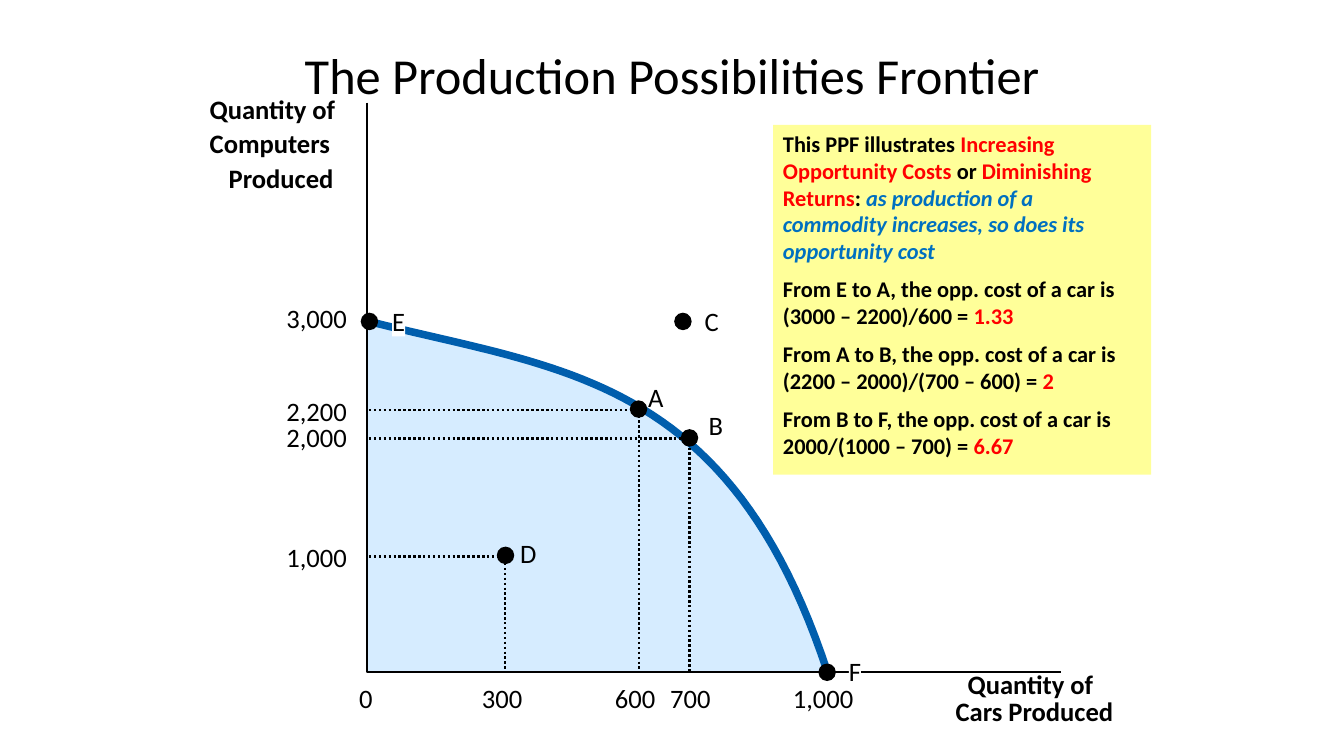
from dataclasses import dataclass

from pptx import Presentation
from pptx import util as u
from pptx.dml import color
from pptx.enum import dml, shapes, text

Pt = u.Pt


@dataclass(frozen=True)
class Theme:
    font: str = "Calibri"
    black: str = "000000"
    white: str = "FFFFFF"
    red: str = "FF0000"
    blue: str = "0070C0"
    frontier: str = "005EAD"
    attainable: str = "D6ECFF"
    note: str = "FFFF99"
    title_size: float = 36
    label_size: float = 19
    note_size: float = 16
    axis_width: float = 1.75
    frontier_width: float = 5.38


@dataclass(frozen=True)
class Box:
    left: float
    top: float
    width: float
    height: float

    @property
    def bottom(self):
        return self.top + self.height

    def lengths(self):
        return [Pt(side) for side in (self.left, self.top, self.width, self.height)]


THEME = Theme()
ALIGN = text.PP_ALIGN
LABEL_HEIGHT = 23
DOT = 12.5


def apply(target, formats):
    for name, value in formats.items():
        setattr(target, name, value)


def paint(shape, fill=None, line=None, width=THEME.axis_width, dash=None):
    shape.shadow.inherit = False
    for part, tone in ((shape.fill, fill), (shape.line.fill, line)):
        if tone:
            part.solid()
            part.fore_color.rgb = color.RGBColor.from_string(tone)
        else:
            part.background()
    if line:
        apply(shape.line, {"width": Pt(width), "dash_style": dash})


def add_span(para, words, size, tone=THEME.black, bold=False, italic=False):
    span = para.add_run()
    span.text = words
    apply(span.font, {"name": THEME.font, "size": Pt(size), "bold": bold, "italic": italic})
    span.font.color.rgb = color.RGBColor.from_string(tone)


def add_label(page, box, words, align=ALIGN.LEFT, bold=False, fill=None, size=THEME.label_size):
    label = page.shapes.add_textbox(*box.lengths())
    if fill:
        paint(label, fill)
    apply(label.text_frame, {
        "margin_left": 0, "margin_right": 0, "margin_top": 0, "margin_bottom": 0,
        "word_wrap": False, "vertical_anchor": text.MSO_ANCHOR.MIDDLE,
    })
    para = label.text_frame.paragraphs[0]
    para.alignment = align
    add_span(para, words, size, bold=bold)


def bezier(start, first, second, end, steps=48):
    points = []
    for step in range(steps + 1):
        t = step / steps
        weights = ((1 - t) ** 3, 3 * t * (1 - t) ** 2, 3 * t * t * (1 - t), t ** 3)
        points.append(tuple(
            sum(weight * value for weight, value in zip(weights, axis))
            for axis in zip(start, first, second, end)
        ))
    return points


def add_outline(page, box, points, close=False, **style):
    places = [(Pt(box.left + x), Pt(box.bottom - y)) for x, y in points]
    builder = page.shapes.build_freeform(*places[0], scale=1.0)
    builder.add_line_segments(places[1:], close=close)
    paint(builder.convert_to_shape(), **style)


def add_curves(page, box):
    edge = bezier((329, 0), (267.8, 180), (177.8, 212.4), (0, 252))
    add_outline(page, box, [(0, 0)] + edge, close=True, fill=THEME.attainable)
    frontier = bezier((329, 0), (259.2, 212.4), (138.2, 216), (1.4, 250.6))
    add_outline(page, box, frontier, line=THEME.frontier, width=THEME.frontier_width)
    axes = [(0, box.height), (0, 0), (box.width, 0)]
    add_outline(page, box, axes, line=THEME.black)


def add_guides(page, box):
    for x, y in ((194.4, 187.2), (230.4, 167), (98.6, 82.8)):
        add_outline(page, box, [(1.4, y), (x, y), (x, 0)], line=THEME.black,
                    dash=dml.MSO_LINE.ROUND_DOT)


def add_points(page, box):
    points = (
        ("B", 230.4, 167.4, 13.7, -20.5, 10.8, None),
        ("D", 99, 83.5, 10.4, -13, 11.5, None),
        ("A", 194, 188, 6.8, -20, 10.8, None),
        ("C", 225.7, 250.6, 15.5, -12.2, 10, None),
        ("E", 1.8, 250.6, 16.2, -12.2, 9.4, THEME.white),
        ("F", 328.7, 0, 15.5, -12.2, 8.7, THEME.white),
    )
    for name, x, y, right, down, width, fill in points:
        across, depth = box.left + x, box.bottom - y
        place = Box(across - DOT / 2, depth - DOT / 2, DOT, DOT)
        dot = page.shapes.add_shape(shapes.MSO_SHAPE.OVAL, *place.lengths())
        paint(dot, THEME.black)
        add_label(page, Box(across + right, depth + down, width, LABEL_HEIGHT), name, fill=fill)


def figure_width(figure):
    commas = figure.count(",")
    return 9.7 * (len(figure) - commas) + 5 * commas


def add_scales(page, box):
    for figure, y in (("3,000", 253.4), ("2,200", 186.5), ("2,000", 168.5), ("1,000", 82.8)):
        width = figure_width(figure)
        place = Box(box.left - 14.4 - width, box.bottom - y - LABEL_HEIGHT / 2, width, LABEL_HEIGHT)
        add_label(page, place, figure, ALIGN.RIGHT)
    for figure, x in (("0", -0.7), ("300", 96.5), ("600", 191.5), ("700", 231), ("1,000", 325.8)):
        width = figure_width(figure)
        place = Box(box.left + x - width / 2, box.bottom + 6.5, width, LABEL_HEIGHT)
        add_label(page, place, figure, ALIGN.CENTER)


def add_axis_title(page, box, pitch, lines):
    for row, (words, indent, width) in enumerate(lines):
        place = Box(box.left + indent, box.top + row * pitch, width, LABEL_HEIGHT)
        add_label(page, place, words, bold=True)


def add_chart_region(page, box):
    add_curves(page, box)
    add_guides(page, box)
    add_points(page, box)
    add_scales(page, box)
    add_axis_title(page, Box(box.left - 112.3, box.top - 7.2, 91, 73), 24.5, (
        ("Quantity of", 0, 90.7), ("Computers", 0, 87), ("Produced", 13.6, 76.3)))
    add_axis_title(page, Box(box.left + 420.5, box.bottom - 2.9, 115, 42), 18.7, (
        ("Quantity of", 8.6, 90.7), ("Cars Produced", 0, 114.5)))


def add_note(page, box):
    note = page.shapes.add_shape(shapes.MSO_SHAPE.RECTANGLE, *box.lengths())
    paint(note, THEME.note)
    apply(note.text_frame, {"word_wrap": True, "vertical_anchor": text.MSO_ANCHOR.TOP})
    intro = note.text_frame.paragraphs[0]
    intro.alignment = ALIGN.LEFT
    for words, tone, italic in (
        ("This PPF illustrates ", THEME.black, False),
        ("Increasing Opportunity Costs ", THEME.red, False),
        ("or", THEME.black, False),
        (" Diminishing Returns", THEME.red, False),
        (": ", THEME.black, False),
        ("as production of a commodity increases, so does its opportunity cost", THEME.blue, True),
    ):
        add_span(intro, words, THEME.note_size, tone, True, italic)
    for start, end, working, cost in (
        ("E", "A", "(3000 – 2200)/600", "1.33"),
        ("A", "B", "(2200 – 2000)/(700 – 600)", "2"),
        ("B", "F", "2000/(1000 – 700)", "6.67"),
    ):
        para = note.text_frame.add_paragraph()
        apply(para, {"alignment": ALIGN.LEFT, "space_before": Pt(8)})
        add_span(para, f"From {start} to {end}, the opp. cost of a car is {working} = ",
                 THEME.note_size, bold=True)
        add_span(para, cost, THEME.note_size, THEME.red, True)


def main():
    deck = Presentation()
    apply(deck, {"slide_width": Pt(960), "slide_height": Pt(540)})
    page = deck.slides.add_slide(deck.slide_layouts[6])
    add_note(page, Box(552.2, 89.3, 270, 249.8))
    add_label(page, Box(156.2, 18, 648, 70), "The Production Possibilities Frontier",
              ALIGN.CENTER, size=THEME.title_size)
    add_chart_region(page, Box(262.1, 73.4, 496, 406.8))
    deck.save("out.pptx")


if __name__ == "__main__":
    main()
